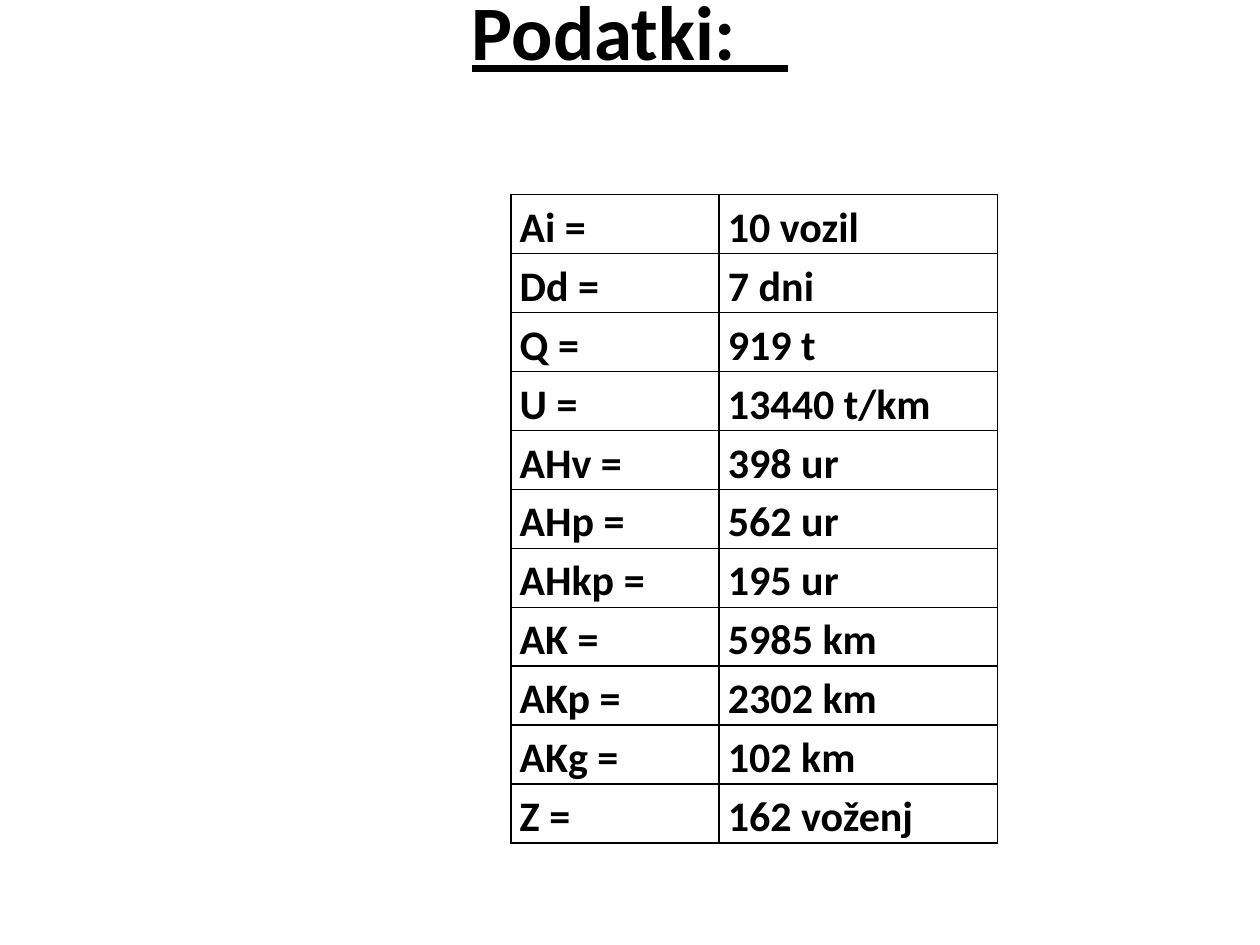
import pptx
import pptx.util
import pptx.dml.color
import pptx.enum.text
import pptx.oxml
import pptx.oxml.ns

Pt = pptx.util.Pt
INK = "000000"
ROWS = [
    ("Ai =", "10 vozil"),
    ("Dd =", "7 dni"),
    ("Q =", "919 t"),
    ("U =", "13440 t/km"),
    ("AHv =", "398 ur"),
    ("AHp =", "562 ur"),
    ("AHkp =", "195 ur"),
    ("AK =", "5985 km"),
    ("AKp =", "2302 km"),
    ("AKg =", "102 km"),
    ("Z =", "162 voženj"),
]


def tint(code):
    return pptx.dml.color.RGBColor.from_string(code)


def style(para, size, under=False):
    for run in para.runs:
        run.font.name = "Calibri"
        run.font.size = Pt(size)
        run.font.bold = True
        run.font.underline = under
        run.font.color.rgb = tint(INK)


def border(cell):
    props = cell._tc.get_or_add_tcPr()
    space = pptx.oxml.ns.nsdecls("a")
    for spot, side in enumerate("LRTB"):
        line = pptx.oxml.parse_xml(
            f'<a:ln{side} {space} w="{Pt(1)}"><a:solidFill>'
            f'<a:srgbClr val="{INK}"/></a:solidFill></a:ln{side}>'
        )
        props.insert(spot, line)


def title(slide, left, top, width, height):
    box = slide.shapes.add_textbox(Pt(left), Pt(top), Pt(width), Pt(height))
    frame = box.text_frame
    frame.word_wrap = True
    frame.auto_size = pptx.enum.text.MSO_AUTO_SIZE.NONE
    frame.vertical_anchor = pptx.enum.text.MSO_ANCHOR.MIDDLE
    frame.margin_bottom = Pt(50)
    frame.text = "Podatki:   \v"
    para = frame.paragraphs[0]
    para.alignment = pptx.enum.text.PP_ALIGN.CENTER
    para.font.size = Pt(44)
    style(para, 44, True)


def fill(cell, text):
    cell.margin_left = cell.margin_right = Pt(5)
    cell.margin_top = cell.margin_bottom = Pt(0)
    cell.fill.background()
    border(cell)
    cell.text_frame.text = text
    para = cell.text_frame.paragraphs[0]
    para.line_spacing = 1.15
    style(para, 24)


def data(slide, left, top, width, height):
    frame = slide.shapes.add_table(
        len(ROWS), 2, Pt(left), Pt(top), Pt(width), Pt(height)
    )
    table = frame.table
    table.first_row = table.horz_banding = False
    first = 119
    table.columns[0].width = Pt(first)
    table.columns[1].width = Pt(width - first)
    for row, texts in zip(table.rows, ROWS):
        row.height = Pt(height / len(ROWS))
        for cell, text in zip(row.cells, texts):
            fill(cell, text)


def main():
    deck = pptx.Presentation()
    deck.slide_width = Pt(720)
    deck.slide_height = Pt(540)
    slide = deck.slides.add_slide(deck.slide_layouts[6])
    title(slide, 36, 21.6, 648, 90)
    data(slide, 292, 111.3, 278, 364.3)
    deck.save("out.pptx")


if __name__ == "__main__":
    main()
